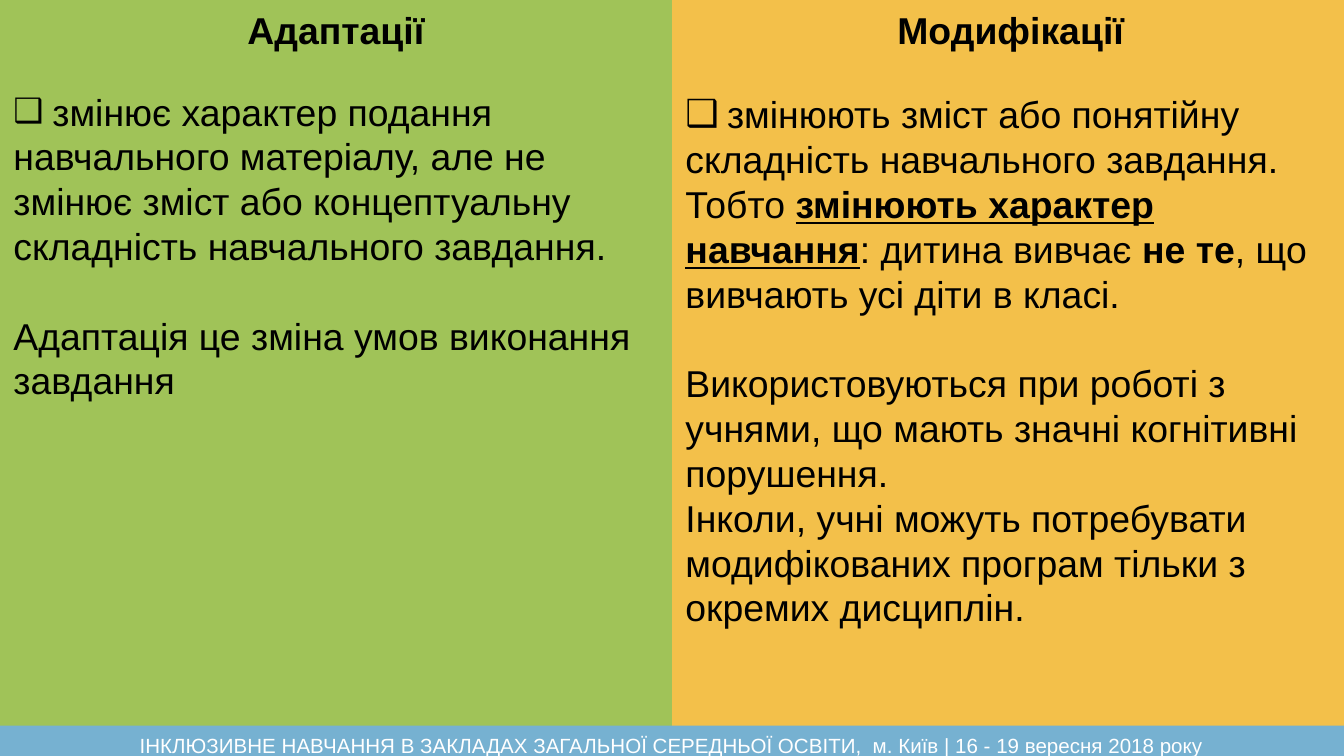
import pptx
import pptx.util
import pptx.dml.color
import pptx.enum.shapes
import pptx.enum.text
import pptx.oxml.ns
import lxml.etree

Inches = pptx.util.Inches
Pt = pptx.util.Pt
RGBColor = pptx.dml.color.RGBColor
ALIGN = pptx.enum.text.PP_ALIGN
ANCHOR = pptx.enum.text.MSO_ANCHOR

GREEN = RGBColor(0xA0, 0xC3, 0x58)
ORANGE = RGBColor(0xF3, 0xC0, 0x4A)
BLUE = RGBColor(0x76, 0xB1, 0xD1)
BLACK = RGBColor(0, 0, 0)
WHITE = RGBColor(255, 255, 255)

PLAIN = {"bold": False, "underline": False}
BOLD = {"bold": True, "underline": False}
STRESSED = {"bold": True, "underline": True}
CENTERED = {"align": ALIGN.CENTER}

ADAPTATION_TITLE = [([("Адаптації", BOLD)], CENTERED)]
ADAPTATION_TEXT = [
    ([("змінює характер подання", PLAIN)], {"hang": 0.29, "bullet_percent": 90}),
    ([("навчального матеріалу, але не", PLAIN)], {}),
    ([("змінює зміст або концептуальну", PLAIN)], {}),
    ([("складність навчального завдання.", PLAIN)], {}),
    ([("Адаптація це зміна умов виконання", PLAIN)], {"before": 24}),
    ([("завдання", PLAIN)], {}),
]
MODIFICATION_TEXT = [
    ([("Модифікації", BOLD)], CENTERED),
    ([("змінюють зміст або понятійну", PLAIN)],
     {"hang": 0.31, "bullet_percent": 100, "before": 21.5}),
    ([("складність навчального завдання.", PLAIN)], {}),
    ([("Тобто ", PLAIN), ("змінюють характер навчання", STRESSED),
      (": дитина вивчає ", PLAIN), ("не те", BOLD),
      (", що вивчають усі діти в класі.", PLAIN)], {}),
    ([("Використовуються при роботі з", PLAIN)], {"before": 24}),
    ([("учнями, що мають значні когнітивні", PLAIN)], {}),
    ([("порушення.", PLAIN)], {}),
    ([("Інколи, учні можуть потребувати", PLAIN)], {}),
    ([("модифікованих програм тільки з", PLAIN)], {}),
    ([("окремих дисциплін.", PLAIN)], {}),
]
FOOTER_TEXT = [
    ([("ІНКЛЮЗИВНЕ НАВЧАННЯ В ЗАКЛАДАХ ЗАГАЛЬНОЇ СЕРЕДНЬОЇ ОСВІТИ,  "
       "м. Київ | 16 - 19 вересня 2018 року", PLAIN)], CENTERED),
]


def set_bullet(para, hang, percent):
    properties = para._p.get_or_add_pPr()
    properties.set("marL", str(Inches(hang)))
    properties.set("indent", str(-Inches(hang)))
    if not hang:
        lxml.etree.SubElement(properties, pptx.oxml.ns.qn("a:buNone"))
        return
    for tag, name, value in (("a:buSzPct", "val", str(percent * 1000)),
                             ("a:buFont", "typeface", "Arial"),
                             ("a:buChar", "char", "❑")):
        lxml.etree.SubElement(properties, pptx.oxml.ns.qn(tag)).set(name, value)


def write_text(box, paragraphs, size=20, color=BLACK, anchor=ANCHOR.TOP):
    frame = box.text_frame
    frame_format = {
        "word_wrap": True, "auto_size": pptx.enum.text.MSO_AUTO_SIZE.NONE,
        "vertical_anchor": anchor,
        "margin_left": Inches(0.1), "margin_right": Inches(0.1),
        "margin_top": Inches(0.05), "margin_bottom": Inches(0.05),
    }
    for name, value in frame_format.items():
        setattr(frame, name, value)
    for index, (spans, layout) in enumerate(paragraphs):
        para = frame.add_paragraph() if index else frame.paragraphs[0]
        set_bullet(para, layout.get("hang", 0), layout.get("bullet_percent"))
        para.alignment = layout.get("align", ALIGN.LEFT)
        para.space_before = Pt(layout.get("before", 0))
        for text, style in spans:
            span = para.add_run()
            span.text = text
            for name, value in {"name": "Arial", "size": Pt(size), **style}.items():
                setattr(span.font, name, value)
            span.font.color.rgb = color


def place(box, left, top, width, height):
    box.left, box.top = Inches(left), Inches(top)
    box.width, box.height = Inches(width), Inches(height)


def fill_box(box, color):
    box.fill.solid()
    box.fill.fore_color.rgb = color
    box.line.fill.background()


def add_panel(page, color, *area):
    panel = page.shapes.add_shape(
        pptx.enum.shapes.MSO_SHAPE.RECTANGLE, *map(Inches, area))
    panel.shadow.inherit = False
    fill_box(panel, color)
    return panel


def main():
    deck = pptx.Presentation()
    deck.slide_width = Inches(10)
    deck.slide_height = deck.slide_width * 9 // 16
    page = deck.slides.add_slide(deck.slide_layouts[3])
    title, adaptation, modification = list(page.placeholders)[:3]

    backdrop = add_panel(page, GREEN, 0, 0, 5, 5.62)
    title._element.addprevious(backdrop._element)

    place(modification, 5, 0, 5.04, 5.69)
    fill_box(modification, ORANGE)
    place(title, 0, 0, 5, 0.44)
    place(adaptation, 0, 0.61, 5, 2.76)
    write_text(title, ADAPTATION_TITLE)
    write_text(adaptation, ADAPTATION_TEXT)
    write_text(modification, MODIFICATION_TEXT)

    footer = add_panel(page, BLUE, 0, 5.4, 10, 0.29)
    write_text(footer, FOOTER_TEXT, size=11, color=WHITE, anchor=ANCHOR.MIDDLE)

    deck.save("out.pptx")


if __name__ == "__main__":
    main()
